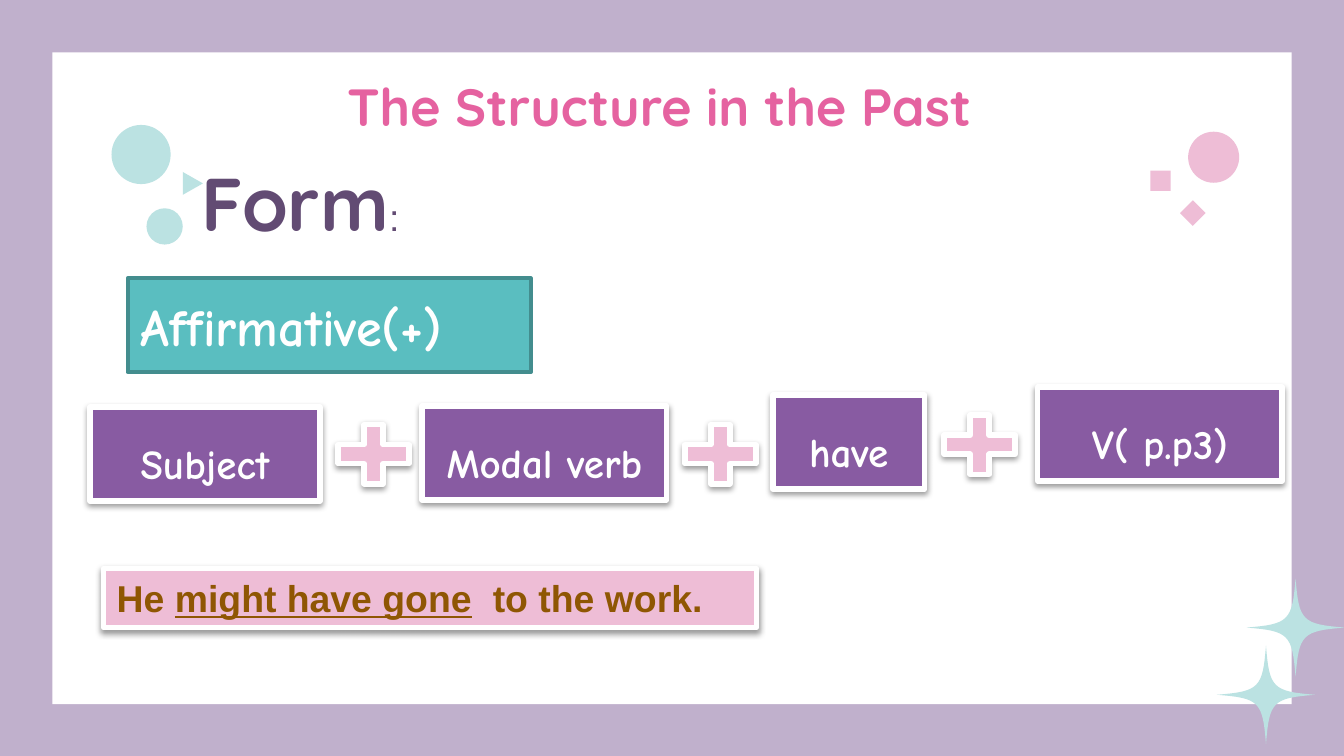
from dataclasses import dataclass

from lxml import etree
from pptx import Presentation
from pptx.dml.color import RGBColor
from pptx.enum.shapes import MSO_SHAPE as Preset
from pptx.enum.text import MSO_ANCHOR as Anchor, PP_ALIGN as Align
from pptx.oxml.ns import qn
from pptx.util import Inches, Pt

WHITE, PINK, MINT = "FFFFFF", "EEBDD6", "BBE2E2"
PURPLE, DARK_PURPLE = "885BA2", "624B73"


@dataclass
class Box:
    left: float
    top: float
    width: float
    height: float

    def lengths(self) -> list:
        return [Inches(v) for v in (self.left, self.top, self.width, self.height)]


@dataclass
class Decoration:
    preset: int
    box: Box
    rotation: float = 0


@dataclass
class FormulaPart:
    text: str
    box: Box


def color(value: str) -> RGBColor:
    return RGBColor.from_string(value)


def paint(shape, fill: str, line: str = "", width: float = 0) -> None:
    shape.shadow.inherit = False
    shape.fill.solid()
    shape.fill.fore_color.rgb = color(fill)
    if line:
        shape.line.color.rgb = color(line)
        shape.line.width = Pt(width)
    else:
        shape.line.fill.background()


def add_preset(shapes, preset: int, box: Box, fill: str, line: str = "", width: float = 0):
    shape = shapes.add_shape(preset, *box.lengths())
    paint(shape, fill, line, width)
    return shape


def add_raised(shapes, preset: int, box: Box, fill: str):
    """Add a shape with a white border and a soft shadow below it."""
    shape = add_preset(shapes, preset, box, fill, WHITE, 3)
    effects = shape.element.spPr.find(qn("a:effectLst"))
    shadow = etree.SubElement(effects, qn("a:outerShdw"), blurRad="40000",
                              dist="20000", dir="5400000", rotWithShape="0")
    black = etree.SubElement(shadow, qn("a:srgbClr"), val="000000")
    etree.SubElement(black, qn("a:alpha"), val="38000")
    return shape


def format_run(run, size: float, font: str, fill: str, bold: bool = True) -> None:
    run.font.size = Pt(size)
    run.font.name = font
    run.font.bold = bold
    run.font.color.rgb = color(fill)


def set_frame(shape, anchor, align, top: float = 0.1, bottom: float = 0.1):
    frame = shape.text_frame
    frame.word_wrap = True
    frame.vertical_anchor = anchor
    frame.margin_left = frame.margin_right = Inches(0.1)
    frame.margin_top, frame.margin_bottom = Inches(top), Inches(bottom)
    frame.paragraphs[0].alignment = align
    return frame


def set_text(shape, text: str, size: float, font: str, fill: str,
             anchor=Anchor.MIDDLE, align=Align.CENTER, top: float = 0.1) -> None:
    paragraph = set_frame(shape, anchor, align, top).paragraphs[0]
    paragraph.text = text
    format_run(paragraph.runs[0], size, font, fill)


def add_group(slide, decorations: list[Decoration], fill: str) -> None:
    group = slide.shapes.add_group_shape()
    for item in decorations:
        shape = add_preset(group.shapes, item.preset, item.box, fill)
        shape.rotation = item.rotation


def add_sparkle(slide, center_x: float, center_y: float, radius: float = 0.365) -> None:
    """Add a four-pointed star whose sides are Bezier curves, turned by quarters."""
    start, first, second, end = (0, -radius), (-0.025, -0.05), (-0.05, -0.025), (-radius, 0)
    steps = 16
    points = []
    quarter = []
    for step in range(steps):
        t = step / steps
        weights = ((1 - t) ** 3, 3 * t * (1 - t) ** 2, 3 * t * t * (1 - t), t ** 3)
        quarter.append(tuple(sum(w * p[axis] for w, p in zip(weights, (start, first, second, end)))
                             for axis in (0, 1)))
    for _ in range(4):
        points += [(Inches(center_x + x), Inches(center_y + y)) for x, y in quarter]
        quarter = [(y, -x) for x, y in quarter]
    builder = slide.shapes.build_freeform(*points[0], scale=1.0)
    builder.add_line_segments(points[1:], close=True)
    paint(builder.convert_to_shape(), MINT)


def main() -> None:
    presentation = Presentation()
    presentation.slide_width, presentation.slide_height = Inches(10), Inches(5.625)
    slide = presentation.slides.add_slide(presentation.slide_layouts[5])
    shapes = slide.shapes

    # Background, white panel and title
    slide.background.fill.solid()
    slide.background.fill.fore_color.rgb = color("C0B0CC")
    panel = add_preset(shapes, Preset.RECTANGLE, Box(0.39, 0.39, 9.22, 4.85), WHITE)
    title = shapes.title
    title.element.addprevious(panel.element)
    title.left, title.top, title.width, title.height = Box(0.75, 0.45, 8.31, 0.63).lengths()
    set_text(title, "The Structure in the Past", 28, "Quicksand", "E562A0", Anchor.TOP)

    # Decorations
    add_group(slide, [
        Decoration(Preset.DIAMOND, Box(8.78, 1.49, 0.19, 0.19)),
        Decoration(Preset.RECTANGLE, Box(8.56, 1.27, 0.15, 0.15)),
        Decoration(Preset.OVAL, Box(8.84, 0.98, 0.38, 0.38)),
    ], PINK)
    add_group(slide, [
        Decoration(Preset.OVAL, Box(0.83, 0.93, 0.44, 0.44)),
        Decoration(Preset.OVAL, Box(1.09, 1.55, 0.27, 0.27)),
        Decoration(Preset.ISOSCELES_TRIANGLE, Box(1.35, 1.29, 0.17, 0.15), 90),
    ], MINT)
    add_sparkle(slide, 9.64, 4.67)
    add_sparkle(slide, 9.42, 5.17)

    # Form heading
    heading = shapes.add_textbox(*Box(1.4, 1.12, 5, 0.77).lengths())
    paragraph = set_frame(heading, Anchor.TOP, Align.LEFT, 0.05, 0.05).paragraphs[0]
    for text, size, font, bold in (("Form", 40, "Quicksand", True), (":", 20, "Arial", False)):
        run = paragraph.add_run()
        run.text = text
        format_run(run, size, font, DARK_PURPLE, bold)

    # Affirmative label
    label = add_preset(shapes, Preset.RECTANGLE, Box(0.95, 2.07, 3, 0.7), "5ABEC0", "438D8E", 2)
    set_text(label, "Affirmative(+)", 28, "Comic Neue", WHITE, align=Align.LEFT)

    # Formula: parts joined by plus signs
    for part in (
        FormulaPart("Subject", Box(0.67, 3.03, 1.71, 0.7)),
        FormulaPart("Modal verb", Box(3.14, 3.02, 1.82, 0.7)),
        FormulaPart("have", Box(5.75, 2.94, 1.13, 0.7)),
        FormulaPart("V( p.p3)", Box(7.72, 2.88, 1.82, 0.7)),
    ):
        shape = add_raised(shapes, Preset.RECTANGLE, part.box, PURPLE)
        set_text(shape, part.text, 22, "Comic Neue", WHITE, top=0.23)
    for left, top in ((2.42, 3.08), (5, 3.08), (6.93, 3.01)):
        add_raised(shapes, Preset.MATH_PLUS, Box(left, top, 0.72, 0.6), PINK)

    # Example sentence
    example = add_raised(shapes, Preset.RECTANGLE, Box(0.77, 4.23, 4.86, 0.44), PINK)
    paragraph = set_frame(example, Anchor.MIDDLE, Align.LEFT, 0.05, 0.05).paragraphs[0]
    for text, underlined in (("He ", False), ("might have gone", True), ("  to the work.", False)):
        run = paragraph.add_run()
        run.text = text
        format_run(run, 20, "Arial", "8F5603")
        run.font.underline = underlined

    presentation.save("out.pptx")


if __name__ == "__main__":
    main()
